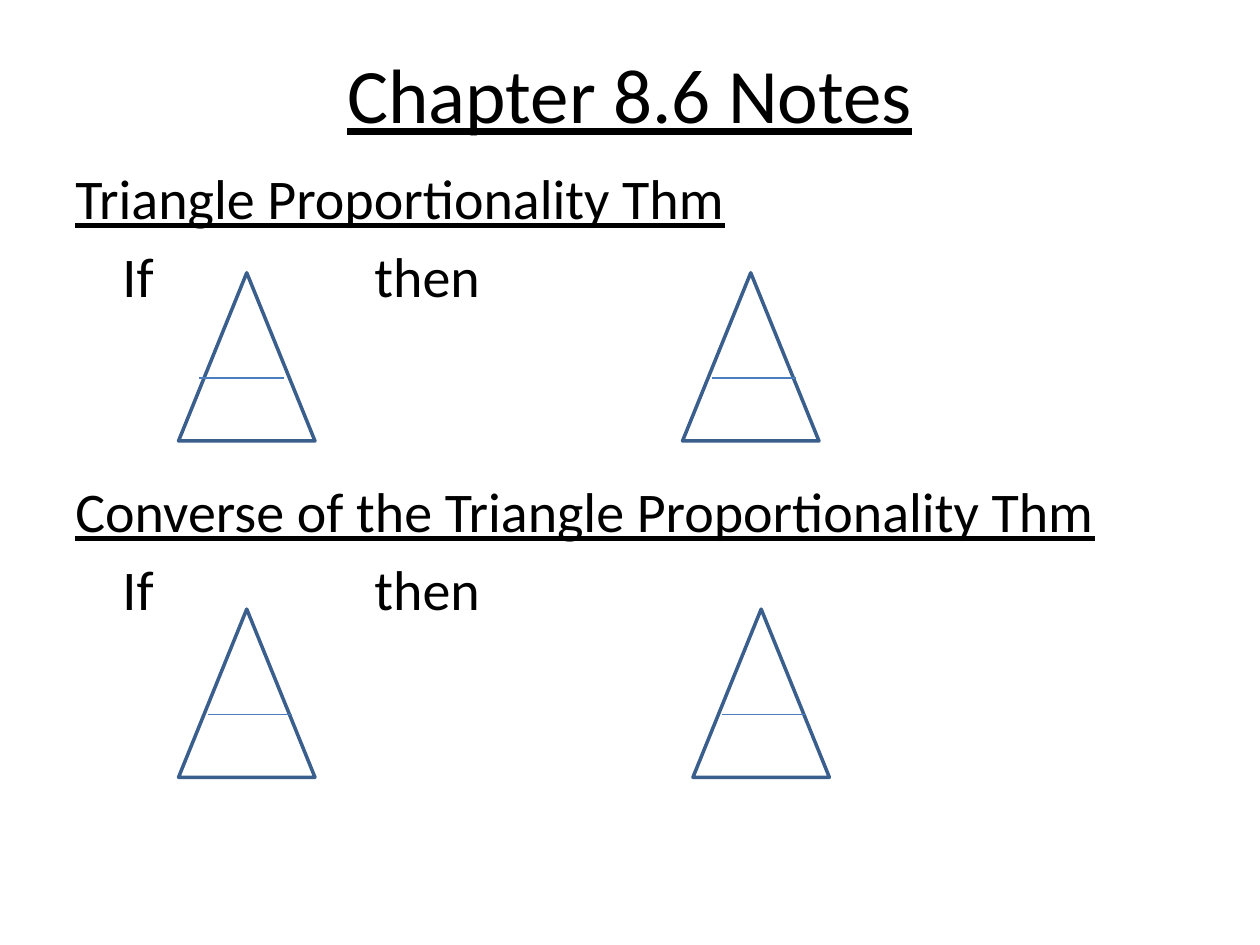
import pptx
import pptx.dml.color
import pptx.enum.shapes
import pptx.enum.text
import pptx.oxml.ns
import pptx.util
from lxml import etree

Cm, Pt = pptx.util.Cm, pptx.util.Pt
RGBColor = pptx.dml.color.RGBColor
ALIGN = pptx.enum.text.PP_ALIGN
ANCHOR = pptx.enum.text.MSO_ANCHOR

BLACK = RGBColor(0x00, 0x00, 0x00)
TRIANGLE_BLUE = RGBColor(0x3A, 0x5F, 0x8C)
BAR_BLUE = RGBColor(0x4B, 0x7E, 0xBC)

HANGING_INDENT = Cm(0.95)
LINE_GAP = 6
DIAGRAM_GAP = 96
IF_THEN = "\tIf\t\t\t\tthen"

# text, underlined, points of space before
NOTES = [
    ("Triangle Proportionality Thm", True, LINE_GAP),
    (IF_THEN, False, LINE_GAP),
    ("Converse of the Triangle Proportionality Thm", True, DIAGRAM_GAP),
    (IF_THEN, False, LINE_GAP),
]

TRIANGLE_WIDTH, TRIANGLE_HEIGHT = 2.75, 3.39
BAR_DROP, BAR_LENGTH = 2.12, 1.7
# top of the row, then (triangle left, bar left) for each diagram, in cm
DIAGRAM_ROWS = [
    (5.5, [(3.6, 4.02), (13.76, 14.35)]),
    (12.28, [(3.6, 4.19), (13.97, 14.55)]),
]


def set_format(target, values):
    for name, value in values.items():
        setattr(target, name, value)


def add_text_box(page, left, top, width, height, anchor):
    box = page.shapes.add_textbox(Cm(left), Cm(top), Cm(width), Cm(height))
    set_format(box.text_frame, {"word_wrap": True, "vertical_anchor": anchor})
    return box


def write_paragraph(para, text, size, underline, **layout):
    set_format(para, layout)
    span = para.add_run()
    span.text = text
    set_format(span.font, {"name": "Calibri", "size": Pt(size), "underline": underline})
    span.font.color.rgb = BLACK


def set_hanging_indent(para):
    properties = para._p.get_or_add_pPr()
    properties.set("marL", str(HANGING_INDENT))
    properties.set("indent", str(-HANGING_INDENT))


def add_title(page):
    box = add_text_box(page, 1.27, 0.76, 22.86, 2.22, ANCHOR.MIDDLE)
    write_paragraph(box.text_frame.paragraphs[0], "Chapter 8.6 Notes", 44, True,
                    alignment=ALIGN.CENTER)


def add_notes(page):
    frame = add_text_box(page, 1.27, 3.18, 22.86, 14.6, ANCHOR.TOP).text_frame
    for index, (text, underline, gap) in enumerate(NOTES):
        para = frame.add_paragraph() if index else frame.paragraphs[0]
        write_paragraph(para, text, 32, underline,
                        alignment=ALIGN.LEFT, space_before=Pt(gap))
        set_hanging_indent(para)


def add_triangle(page, left, top):
    triangle = page.shapes.add_shape(
        pptx.enum.shapes.MSO_SHAPE.ISOSCELES_TRIANGLE,
        Cm(left), Cm(top), Cm(TRIANGLE_WIDTH), Cm(TRIANGLE_HEIGHT))
    triangle.shadow.inherit = False
    triangle.fill.background()
    triangle.line.color.rgb = TRIANGLE_BLUE
    triangle.line.width = Pt(2)


def add_bar(page, left, height):
    """Draw the line that crosses a triangle parallel to its base."""
    bar = page.shapes.add_connector(
        pptx.enum.shapes.MSO_CONNECTOR.STRAIGHT,
        Cm(left), Cm(height), Cm(left + BAR_LENGTH), Cm(height))
    bar.line.color.rgb = BAR_BLUE
    bar.line.width = Pt(0.75)
    etree.SubElement(bar._element.spPr, pptx.oxml.ns.qn("a:effectLst"))


def main():
    deck = pptx.Presentation()
    set_format(deck, {"slide_width": Cm(25.4), "slide_height": Cm(19.05)})
    page = deck.slides.add_slide(deck.slide_layouts[6])
    add_title(page)
    add_notes(page)
    for top, diagrams in DIAGRAM_ROWS:
        for triangle_left, _ in diagrams:
            add_triangle(page, triangle_left, top)
        for _, bar_left in diagrams:
            add_bar(page, bar_left, top + BAR_DROP)
    deck.save("out.pptx")


if __name__ == "__main__":
    main()
